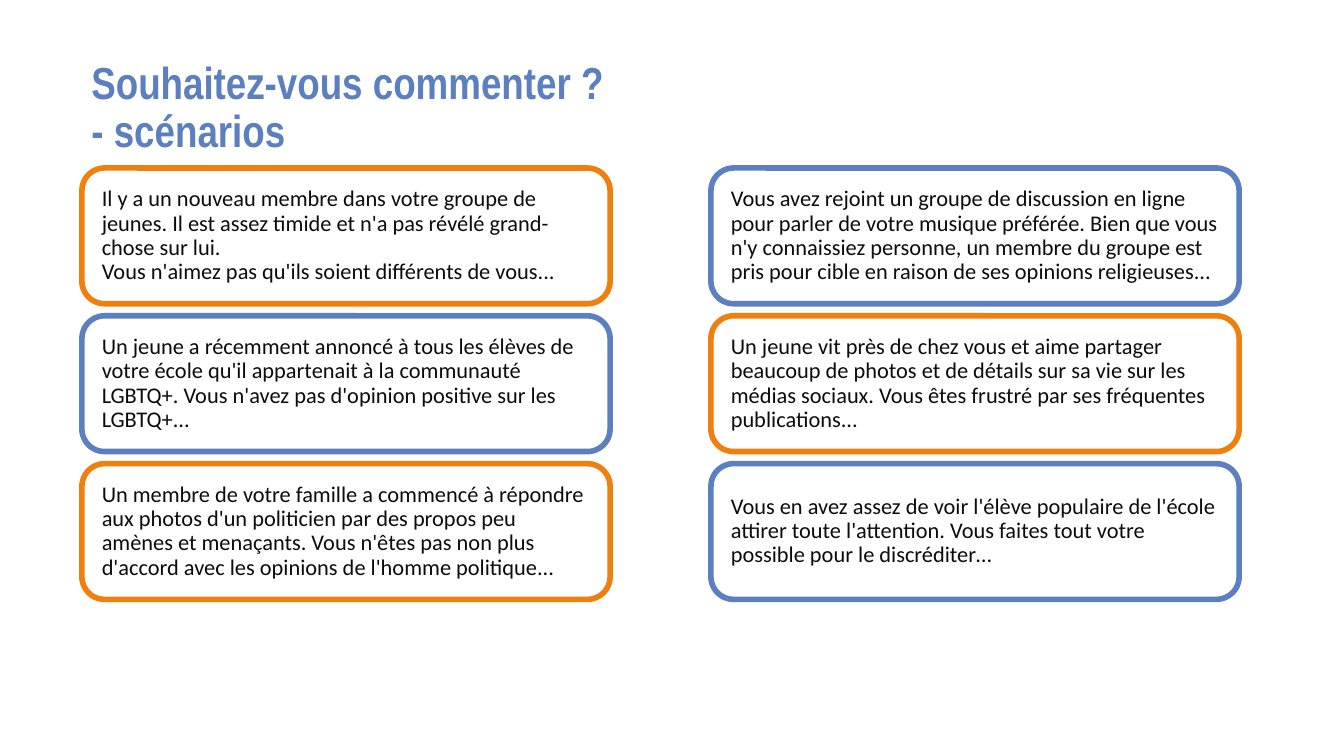
from pptx import Presentation
from pptx.dml.color import RGBColor
from pptx.enum.shapes import MSO_SHAPE
from pptx.enum.text import MSO_ANCHOR, MSO_AUTO_SIZE, PP_ALIGN
from pptx.util import Inches, Pt

COLORS = {"blue": "5B7FBF", "orange": "F0800E", "ink": "0C0C0C"}

TITLE = "Souhaitez-vous commenter ? - scénarios"
SCENARIOS = [
    [
        [
            "Il y a un nouveau membre dans votre groupe de jeunes. Il est assez timide et n'a pas révélé grand-chose sur lui.",
            "Vous n'aimez pas qu'ils soient différents de vous...",
        ],
        ["Vous avez rejoint un groupe de discussion en ligne pour parler de votre musique préférée. Bien que vous n'y connaissiez personne, un membre du groupe est pris pour cible en raison de ses opinions religieuses..."],
    ],
    [
        ["Un jeune a récemment annoncé à tous les élèves de votre école qu'il appartenait à la communauté LGBTQ+. Vous n'avez pas d'opinion positive sur les LGBTQ+..."],
        ["Un jeune vit près de chez vous et aime partager beaucoup de photos et de détails sur sa vie sur les médias sociaux. Vous êtes frustré par ses fréquentes publications..."],
    ],
    [
        ["Un membre de votre famille a commencé à répondre aux photos d'un politicien par des propos peu amènes et menaçants. Vous n'êtes pas non plus d'accord avec les opinions de l'homme politique..."],
        ["Vous en avez assez de voir l'élève populaire de l'école attirer toute l'attention. Vous faites tout votre possible pour le discréditer…"],
    ],
]

LEFT, TOP = 0.61, 1.25
CARD_WIDTH, CARD_HEIGHT = 3.93, 1.01
COLUMN_STEP, ROW_STEP = 4.68, 1.1


def color(name):
    return RGBColor.from_string(COLORS[name])


def write(shape, lines, *, font, size, ink, bold=False, inset=(0.1, 0.1)):
    frame = shape.text_frame
    frame.word_wrap = True
    frame.auto_size = MSO_AUTO_SIZE.NONE
    frame.vertical_anchor = MSO_ANCHOR.MIDDLE
    frame.margin_left = frame.margin_right = Inches(inset[0])
    frame.margin_top = frame.margin_bottom = Inches(inset[1])
    for index, line in enumerate(lines):
        para = frame.add_paragraph() if index else frame.paragraphs[0]
        para.alignment = PP_ALIGN.LEFT
        para.line_spacing = 0.9
        para.space_before = para.space_after = Pt(0)
        span = para.add_run()
        span.text = line
        span.font.name = font
        span.font.size = Pt(size)
        span.font.bold = bold
        span.font.color.rgb = color(ink)


deck = Presentation()
deck.slide_width = Inches(10)
deck.slide_height = deck.slide_width * 9 // 16
page = deck.slides.add_slide(deck.slide_layouts[5])

title = page.shapes.title
title.left, title.top = Inches(LEFT), Inches(0.37)
title.width, title.height = Inches(4.07), Inches(0.88)
write(title, [TITLE], font="Arial Narrow", size=24, ink="blue", bold=True, inset=(0.07, 0.04))

for row, scenarios in enumerate(SCENARIOS):
    for column, lines in enumerate(scenarios):
        card = page.shapes.add_shape(
            MSO_SHAPE.ROUNDED_RECTANGLE,
            Inches(LEFT + column * COLUMN_STEP),
            Inches(TOP + row * ROW_STEP),
            Inches(CARD_WIDTH),
            Inches(CARD_HEIGHT),
        )
        card.shadow.inherit = False
        card.fill.background()
        card.line.color.rgb = color("blue" if (row + column) % 2 else "orange")
        card.line.width = Pt(3)
        write(card, lines, font="Calibri", size=12, ink="ink")

deck.save("out.pptx")
